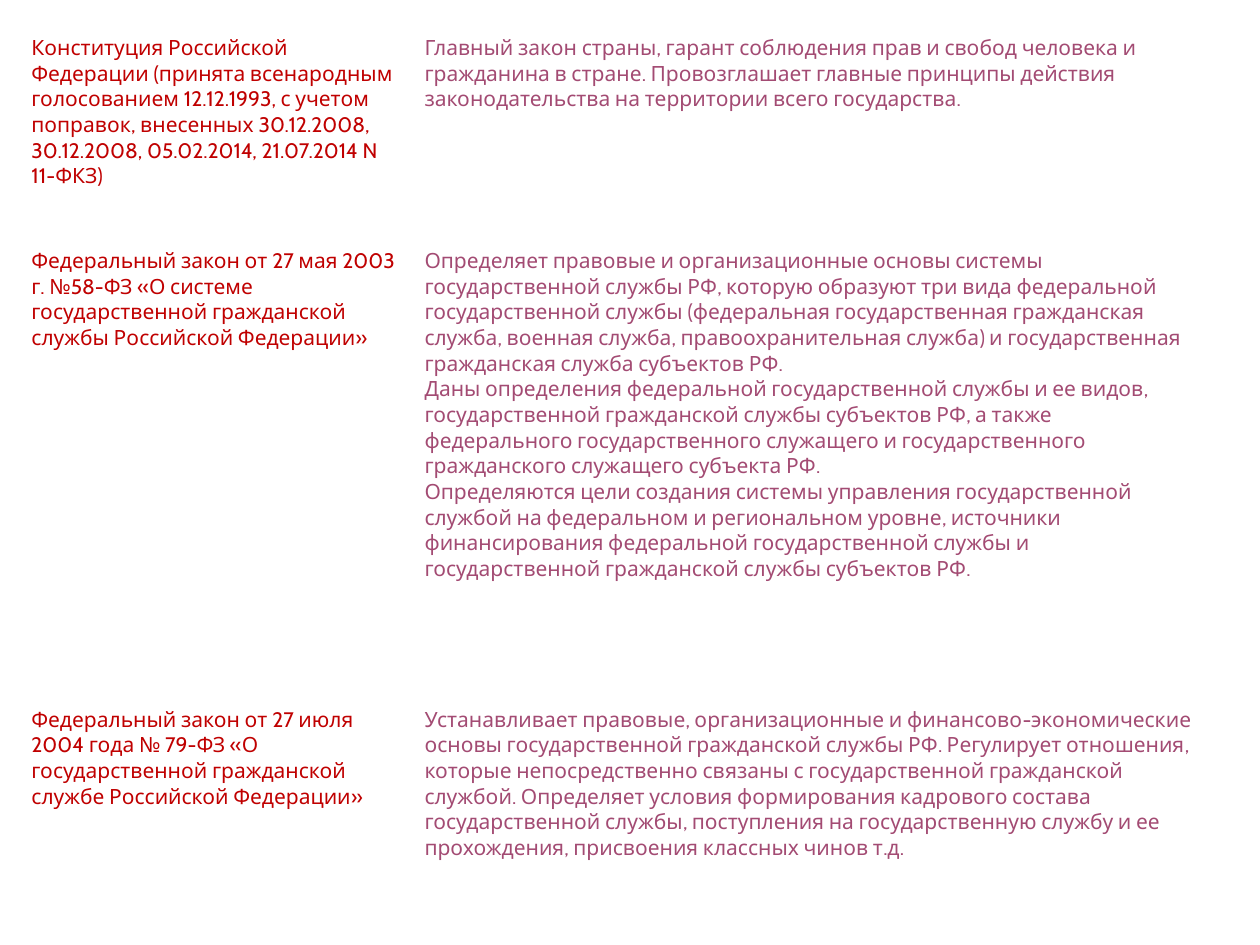
from pptx import Presentation
from pptx.dml.color import RGBColor as RGB
from pptx.util import Inches, Pt

RED, PLUM, WHITE = "C00000", "A34B73", "FFFFFF"
FONT = {"name": "Cabin", "size": Pt(12), "bold": False}
PAD = {
    "margin_left": Inches(0.09), "margin_right": Inches(0.09),
    "margin_top": Inches(0.04), "margin_bottom": Inches(0.04),
}
COLS = [3.12, 6.3]
ROWS = [1.69, 3.64, 1.73]

# Each law: its title, then the paragraphs of its summary
LAWS = [
    ("Конституция Российской Федерации (принята всенародным голосованием "
     "12.12.1993, с учетом поправок, внесенных 30.12.2008, 30.12.2008, "
     "05.02.2014, 21.07.2014 N 11-ФКЗ)",
     ["Главный закон страны, гарант соблюдения прав и свобод человека и "
      "гражданина в стране. Провозглашает главные принципы действия "
      "законодательства на территории всего государства."]),
    ("Федеральный закон от 27 мая 2003 г. №58-ФЗ «О системе "
     "государственной гражданской службы Российской Федерации»",
     ["Определяет правовые и организационные основы системы "
      "государственной службы РФ, которую образуют три вида федеральной "
      "государственной службы (федеральная государственная гражданская "
      "служба, военная служба, правоохранительная служба) и "
      "государственная гражданская служба субъектов РФ.",
      "Даны определения федеральной государственной службы и ее видов, "
      "государственной гражданской службы субъектов РФ, а также "
      "федерального государственного служащего и государственного "
      "гражданского служащего субъекта РФ.",
      "Определяются цели создания системы управления государственной "
      "службой на федеральном и региональном уровне, источники "
      "финансирования федеральной государственной службы и "
      "государственной гражданской службы субъектов РФ."]),
    ("Федеральный закон от 27 июля 2004 года № 79-ФЗ «О "
     "государственной гражданской службе Российской Федерации»",
     ["Устанавливает правовые, организационные и финансово-экономические "
      "основы государственной гражданской службы РФ. Регулирует отношения, "
      "которые непосредственно связаны с государственной гражданской "
      "службой. Определяет условия формирования кадрового состава "
      "государственной службы, поступления на государственную службу и ее "
      "прохождения, присвоения классных чинов т.д."]),
]


def paint(target, color):
    target.rgb = RGB.from_string(color)


def style(item, values):
    for key, value in values.items():
        setattr(item, key, value)


def fill_cell(cell, paras, color):
    style(cell, PAD)
    cell.fill.solid()
    paint(cell.fill.fore_color, WHITE)
    cell.text = "\n".join(paras)
    for para in cell.text_frame.paragraphs:
        for run in para.runs:
            style(run.font, FONT)
            paint(run.font.color, color)


def add_laws(slide, left, top, width, height):
    """Place the table of laws and their summaries in the given box."""
    frame = slide.shapes.add_table(len(ROWS), len(COLS), left, top, width, height)
    table = frame.table
    style(table, {"first_row": False, "horz_banding": False})
    for col, size in zip(table.columns, COLS):
        col.width = int(width * size / sum(COLS))
    for row, size, (title, notes) in zip(table.rows, ROWS, LAWS):
        row.height = int(height * size / sum(ROWS))
        fill_cell(row.cells[0], [title], RED)
        fill_cell(row.cells[1], notes, PLUM)


def main():
    prs = Presentation()
    style(prs, {"slide_width": Inches(10), "slide_height": Inches(7.5)})
    slide = prs.slides.add_slide(prs.slide_layouts[6])
    add_laws(slide, Inches(0.16), Inches(0.24), Inches(9.42), Inches(7.06))
    prs.save("out.pptx")


if __name__ == "__main__":
    main()
